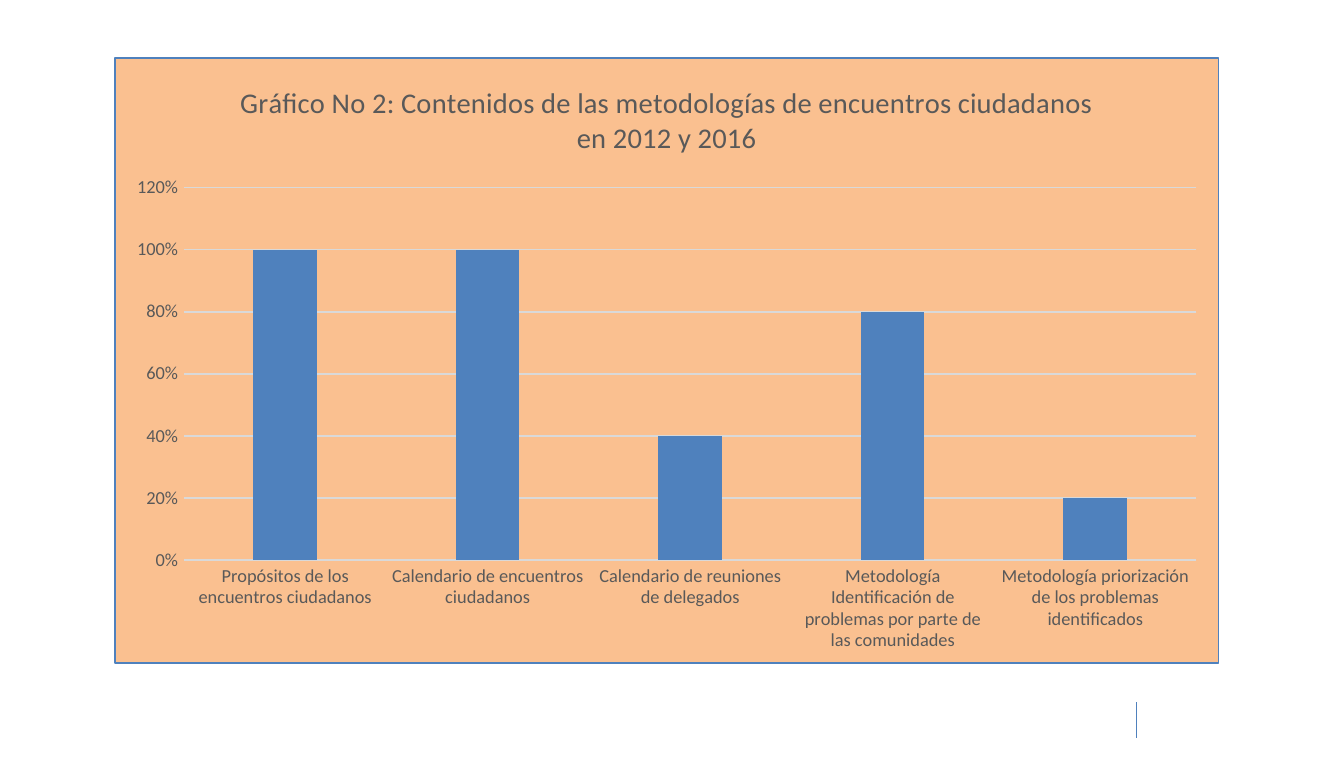
import pptx
import pptx.chart.data
import pptx.dml.color
import pptx.enum.chart
import pptx.enum.shapes
import pptx.oxml
import pptx.oxml.ns
import pptx.oxml.xmlchemy
import pptx.util

Cm, Pt = pptx.util.Cm, pptx.util.Pt

MEETING_CONTENTS = {
    "Propósitos de los encuentros ciudadanos": 1,
    "Calendario de encuentros ciudadanos": 1,
    "Calendario de reuniones de delegados": 0.4,
    "Metodología Identificación de problemas por parte de las comunidades": 0.8,
    "Metodología priorización de los problemas identificados": 0.2,
}


def rgb(color):
    return pptx.dml.color.RGBColor.from_string(color)


class SlideBuilder:
    """Holds the style and the current slide, and draws each kind of element."""

    font, blue, orange, gray, pale = "Calibri", "4F81BD", "FAC090", "595959", "D9D9D9"
    line_width = Pt(0.75)

    def __init__(self, prs):
        self.slide = prs.slides.add_slide(prs.slide_layouts[6])

    def set_font(self, font, size, color):
        font.name, font.size, font.bold = self.font, Pt(size), False
        font.color.rgb = rgb(color)

    def set_line(self, line, color):
        line.color.rgb = rgb(color)
        line.width = self.line_width

    def line(self, x1, y1, x2, y2):
        sp = self.slide.shapes.add_connector(
            pptx.enum.shapes.MSO_CONNECTOR.STRAIGHT, Cm(x1), Cm(y1), Cm(x2), Cm(y2))
        self.set_line(sp.line, self.blue)
        sp._element.spPr.append(pptx.oxml.xmlchemy.OxmlElement("a:effectLst"))

    def chart_area(self, chart):
        ns = pptx.oxml.ns.nsdecls("c", "a")
        area = pptx.oxml.parse_xml(
            f'<c:spPr {ns}><a:solidFill><a:srgbClr val="{self.orange}"/></a:solidFill>'
            f'<a:ln w="{self.line_width}"><a:solidFill><a:srgbClr val="{self.blue}"/>'
            '</a:solidFill></a:ln></c:spPr>')
        chart._chartSpace.find(pptx.oxml.ns.qn("c:chart")).addnext(area)

    def column_chart(self, x, y, w, h, title, values):
        data = pptx.chart.data.CategoryChartData(number_format="0%")
        data.categories = list(values)
        data.add_series("Series 1", list(values.values()))
        chart = self.slide.shapes.add_chart(
            pptx.enum.chart.XL_CHART_TYPE.COLUMN_CLUSTERED,
            Cm(x), Cm(y), Cm(w), Cm(h), data).chart
        self.set_font(chart.font, 10, "000000")
        self.chart_area(chart)
        chart.has_legend = False
        chart.has_title = True
        r = chart.chart_title.text_frame.paragraphs[0].add_run()
        r.text = title
        self.set_font(r.font, 14, self.gray)

        plot = chart.plots[0]
        plot.gap_width, plot.overlap, plot.vary_by_categories = 219, -27, False
        fill = plot.series[0].format.fill
        fill.solid()
        fill.fore_color.rgb = rgb(self.blue)

        for axis in (chart.category_axis, chart.value_axis):
            axis.major_tick_mark = pptx.enum.chart.XL_TICK_MARK.NONE
            axis.minor_tick_mark = pptx.enum.chart.XL_TICK_MARK.NONE
            self.set_font(axis.tick_labels.font, 9, self.gray)
        self.set_line(chart.category_axis.format.line, self.pale)
        axis = chart.value_axis
        axis.minimum_scale, axis.maximum_scale, axis.major_unit = 0, 1.2, 0.2
        axis.tick_labels.number_format = "0%"
        axis.tick_labels.number_format_is_linked = False
        axis.format.line.fill.background()
        self.set_line(axis.major_gridlines.format.line, self.pale)


def main():
    prs = pptx.Presentation()
    prs.slide_width, prs.slide_height = Cm(23.29), Cm(13.21)
    s = SlideBuilder(prs)
    s.line(19.69, 12.17, 19.69, 12.8)
    s.column_chart(
        1.98, 0.99, 19.15, 10.52,
        "Gráfico No 2: Contenidos de las metodologías de encuentros ciudadanos en 2012 y 2016",
        MEETING_CONTENTS)
    prs.save("out.pptx")


if __name__ == "__main__":
    main()
